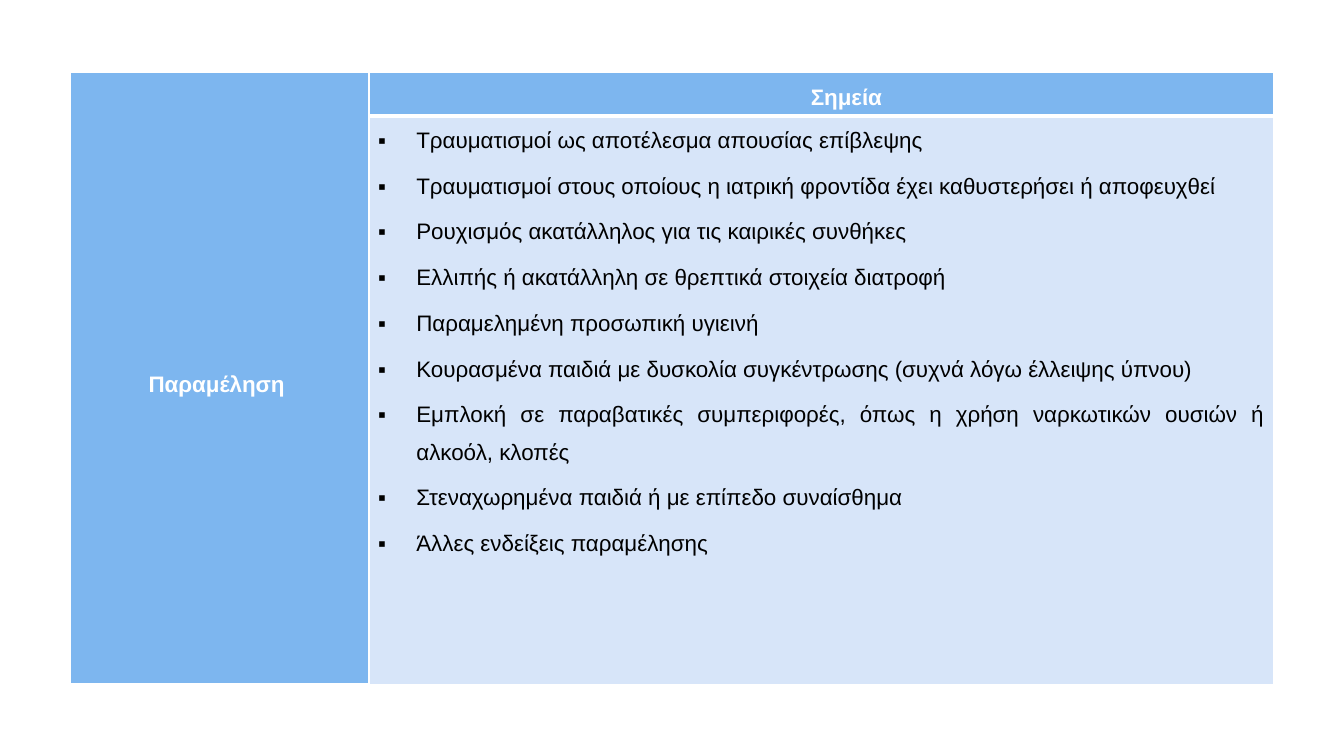
from lxml import etree
from pptx import Presentation
from pptx import util as u
from pptx.dml.color import RGBColor
from pptx.enum import text
from pptx.oxml.ns import qn

WIDTH, HEIGHT = 13.33, 7.5
COLUMNS = (2.96, 8.97)
ROWS = (0.43, 5.64)
LEFT, TOP = 0.7, 0.72
WHITE, BLACK, BLUE, PALE = "FFFFFF", "000000", "7DB6EF", "D7E5F9"

SIGNS = (
    "Τραυματισμοί ως αποτέλεσμα απουσίας επίβλεψης",
    "Τραυματισμοί στους οποίους η ιατρική φροντίδα έχει καθυστερήσει ή αποφευχθεί",
    "Ρουχισμός ακατάλληλος για τις καιρικές συνθήκες",
    "Ελλιπής ή ακατάλληλη σε θρεπτικά στοιχεία διατροφή",
    "Παραμελημένη προσωπική υγιεινή",
    "Κουρασμένα παιδιά με δυσκολία συγκέντρωσης (συχνά λόγω έλλειψης ύπνου)",
    "Εμπλοκή σε παραβατικές συμπεριφορές, όπως η χρήση ναρκωτικών ουσιών ή αλκοόλ, κλοπές",
    "Στεναχωρημένα παιδιά ή με επίπεδο συναίσθημα",
    "Άλλες ενδείξεις παραμέλησης",
)


def color(value):
    return RGBColor.from_string(value)


def apply(target, values):
    for name, value in values.items():
        setattr(target, name, value)


def add_borders(cell, widths):
    """Draw white cell edges; widths maps each side to points."""
    properties = cell._tc.get_or_add_tcPr()
    for side, width in widths.items():
        line = etree.SubElement(properties, qn("a:ln" + side), w=str(u.Pt(width)))
        fill = etree.SubElement(line, qn("a:solidFill"))
        etree.SubElement(fill, qn("a:srgbClr"), val=WHITE)


def indent(para, margin, first=0, bullet=None):
    properties = para._p.get_or_add_pPr()
    properties.set("marL", str(u.Inches(margin)))
    properties.set("indent", str(u.Inches(first)))
    if bullet:
        etree.SubElement(properties, qn("a:buFont"), typeface="Arial")
        etree.SubElement(properties, qn("a:buChar"), char=bullet)


def fill_cell(cell, lines, fill, ink, bold, align, anchor, edges, margins):
    add_borders(cell, edges)
    cell.fill.solid()
    cell.fill.fore_color.rgb = color(fill)
    apply(cell, {"margin_left": u.Inches(0.09), "margin_right": u.Inches(0.09),
                 "margin_top": 0, "margin_bottom": 0, "vertical_anchor": anchor})
    frame = cell.text_frame
    for number, line in enumerate(lines):
        para = frame.add_paragraph() if number else frame.paragraphs[0]
        apply(para, {"alignment": align, "line_spacing": 1.5, "space_before": u.Pt(6)})
        indent(para, *margins)
        span = para.add_run()
        span.text = line
        apply(span.font, {"name": "Arial", "size": u.Pt(16), "bold": bold})
        span.font.color.rgb = color(ink)


def add_signs_table(page):
    frame = page.shapes.add_table(
        len(ROWS), len(COLUMNS), u.Inches(LEFT), u.Inches(TOP),
        u.Inches(sum(COLUMNS)), u.Inches(sum(ROWS)))
    table = frame.table
    apply(table, {"first_row": False, "horz_banding": False})
    for column, width in zip(table.columns, COLUMNS):
        column.width = u.Inches(width)
    for row, height in zip(table.rows, ROWS):
        row.height = u.Inches(height)
    table.cell(0, 0).merge(table.cell(1, 0))

    center, justify = text.PP_ALIGN.CENTER, text.PP_ALIGN.JUSTIFY
    top, middle = text.MSO_ANCHOR.TOP, text.MSO_ANCHOR.MIDDLE
    thin = dict.fromkeys("LRTB", 1)

    # Topic and heading
    fill_cell(table.cell(0, 0), ["Παραμέληση "], BLUE, WHITE, True,
              center, middle, {**thin, "B": 3}, (0,))
    fill_cell(table.cell(0, 1), ["Σημεία"], BLUE, WHITE, True,
              center, top, {**thin, "B": 3}, (0.5,))
    # List of signs
    fill_cell(table.cell(1, 1), SIGNS, PALE, BLACK, False,
              justify, top, {**thin, "T": 3}, (0.38, -0.38, "▪"))


def main():
    deck = Presentation()
    apply(deck, {"slide_width": u.Inches(WIDTH), "slide_height": u.Inches(HEIGHT)})
    page = deck.slides.add_slide(deck.slide_layouts[6])
    add_signs_table(page)
    deck.save("out.pptx")


if __name__ == "__main__":
    main()
